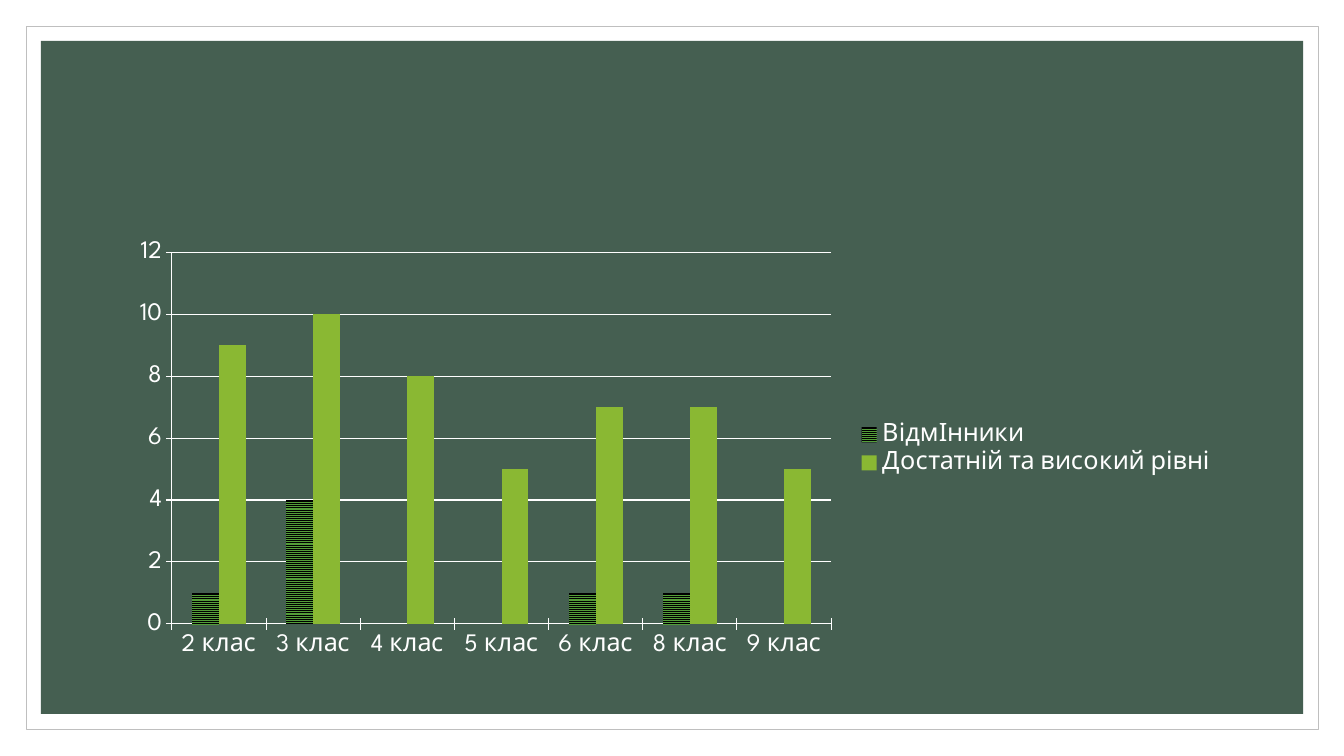
from pptx import Presentation
from pptx.chart.data import CategoryChartData
from pptx.dml.color import RGBColor
from pptx.enum.chart import XL_CHART_TYPE, XL_LEGEND_POSITION, XL_TICK_MARK
from pptx.enum.dml import MSO_PATTERN
from pptx.enum.shapes import MSO_SHAPE
from pptx.util import Emu, Pt

EMU_PER_PX = 9525  # 96 px to the inch
FONT_NAME = "League Spartan"
WHITE, GREY, DARK_GREEN = "FFFFFF", "BFBFBF", "455F51"
GREEN, LIME, BLACK = "549E39", "8AB833", "000000"

CLASSES = ["2 клас", "3 клас", "4 клас", "5 клас", "6 клас", "8 клас", "9 клас"]
RESULTS = {
    "ВідмІнники": [1, 4, None, None, 1, 1, None],
    "Достатній та високий рівні": [9, 10, 8, 5, 7, 7, 5],
}


def px(length):
    return Emu(length * EMU_PER_PX)


def color(hex_string):
    return RGBColor.from_string(hex_string)


def format_line(line, hex_string, width=0.75):
    line.color.rgb = color(hex_string)
    line.width = Pt(width)


def format_text(font, size=18, hex_string=WHITE):
    font.name = FONT_NAME
    font.size = Pt(size)
    font.color.rgb = color(hex_string)


def add_rectangle(slide, left, top, width, height, fill, outline=None):
    shape = slide.shapes.add_shape(
        MSO_SHAPE.RECTANGLE, px(left), px(top), px(width), px(height))
    shape.shadow.inherit = False
    shape.fill.solid()
    shape.fill.fore_color.rgb = color(fill)
    if outline:
        format_line(shape.line, outline, width=0.5)
    else:
        shape.line.fill.background()


def format_axis(axis):
    axis.major_tick_mark = XL_TICK_MARK.CROSS
    format_line(axis.format.line, WHITE)


def add_results_chart(slide, left, top, width, height):
    chart_data = CategoryChartData()
    chart_data.categories = CLASSES
    for name, values in RESULTS.items():
        chart_data.add_series(name, values)
    chart = slide.shapes.add_chart(
        XL_CHART_TYPE.COLUMN_CLUSTERED,
        px(left), px(top), px(width), px(height), chart_data).chart
    chart.has_title = False
    format_text(chart.font)

    # Axes and gridlines
    format_axis(chart.category_axis)
    format_axis(chart.value_axis)
    chart.value_axis.has_major_gridlines = True
    format_line(chart.value_axis.major_gridlines.format.line, WHITE)

    # Columns: striped for top pupils, plain for the rest
    plot = chart.plots[0]
    plot.vary_by_categories = False
    plot.gap_width = 150
    plot.overlap = 0
    top_pupils, good_pupils = plot.series
    stripes = top_pupils.format.fill
    stripes.patterned()
    stripes.pattern = MSO_PATTERN.LIGHT_HORIZONTAL
    stripes.fore_color.rgb = color(GREEN)
    stripes.back_color.rgb = color(BLACK)
    good_pupils.format.fill.solid()
    good_pupils.format.fill.fore_color.rgb = color(LIME)

    # Legend
    chart.has_legend = True
    chart.legend.position = XL_LEGEND_POSITION.RIGHT
    chart.legend.include_in_layout = False


def main():
    presentation = Presentation()
    presentation.slide_width = px(1280)
    presentation.slide_height = px(720)
    slide = presentation.slides.add_slide(presentation.slide_layouts[6])

    # Frame and panel
    add_rectangle(slide, 25, 25, 1231, 670, WHITE, outline=GREY)
    add_rectangle(slide, 39, 39, 1202, 641, DARK_GREEN)

    # Results by class
    add_results_chart(slide, 112, 221, 1056, 413)

    presentation.save("out.pptx")


if __name__ == "__main__":
    main()
